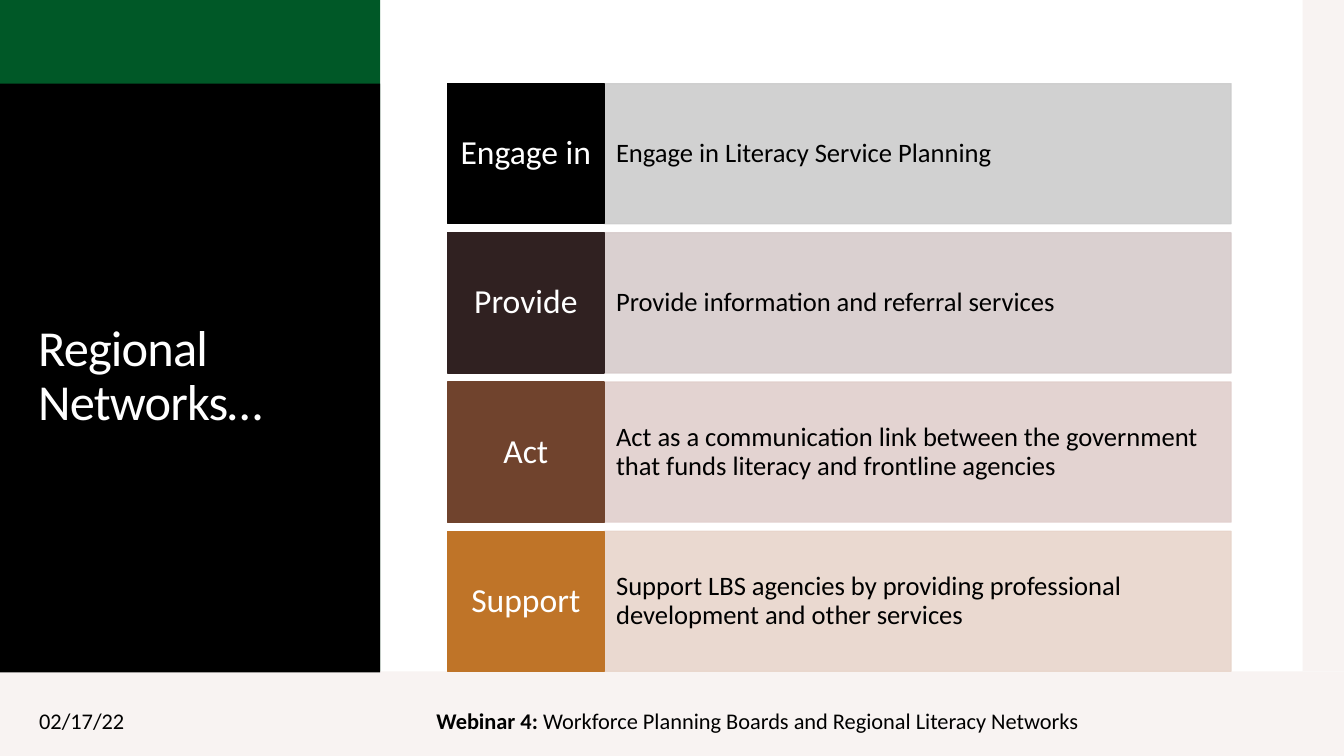
from pptx import Presentation
from pptx.dml.color import RGBColor
from pptx.enum.shapes import MSO_SHAPE
from pptx.enum.text import MSO_ANCHOR, PP_ALIGN
from pptx.oxml.ns import qn
from pptx.util import Inches, Pt
from lxml.etree import SubElement

FONT = "Calibri"
BLACK, WHITE, GREEN, BLUSH = "000000", "FFFFFF", "005827", "F8F3F2"
ROLES = [
    ("Engage in", "Engage in Literacy Service Planning", "000000", "CCCCCC"),
    ("Provide", "Provide information and referral services", "302121", "D7CBCB"),
    ("Act", "Act as a communication link between the government that funds "
     "literacy and frontline agencies", "70432D", "E1CFCC"),
    ("Support", "Support LBS agencies by providing professional development "
     "and other services", "BF7428", "E8D5CB"),
]


def color(value):
    return RGBColor.from_string(value)


def set_opacity(fill_parent, percent):
    value = fill_parent.find(qn("a:solidFill"))[0]
    SubElement(value, qn("a:alpha")).set("val", str(percent * 1000))


def add_block(page, left, top, width, height, fill, outlined=False, opacity=100):
    block = page.shapes.add_shape(MSO_SHAPE.RECTANGLE, Inches(left), Inches(top),
                                  Inches(width), Inches(height))
    block.shadow.inherit = False
    block.fill.solid()
    block.fill.fore_color.rgb = color(fill)
    if outlined:
        block.line.color.rgb = color(fill)
        block.line.width = Pt(0.85)
    else:
        block.line.fill.background()
    if opacity < 100:
        properties = block.fill._xPr
        set_opacity(properties, opacity)
        set_opacity(properties.find(qn("a:ln")), opacity)
    return block


def write(shape, spans, size, ink=BLACK, align=PP_ALIGN.LEFT, spacing=1.0,
          margins=(0.1, 0.05)):
    frame = shape.text_frame
    frame.word_wrap = True
    frame.vertical_anchor = MSO_ANCHOR.MIDDLE
    frame.margin_left = frame.margin_right = Inches(margins[0])
    frame.margin_top = frame.margin_bottom = Inches(margins[1])
    para = frame.paragraphs[0]
    para.alignment = align
    para.line_spacing = spacing
    para.font.name = FONT
    para.font.size = Pt(size)
    para.font.color.rgb = color(ink)
    for text, bold in spans:
        span = para.add_run()
        span.text = text
        span.font.bold = bold
    return para


def add_text(page, left, top, width, height, spans, size, **style):
    box = page.shapes.add_textbox(Inches(left), Inches(top),
                                  Inches(width), Inches(height))
    return write(box, spans, size, **style)


def add_frame(page, width, footer_top, side_width):
    add_block(page, -0.04, footer_top, width + 0.05, 0.85, BLUSH)
    add_block(page, width - side_width, 0, side_width, footer_top, BLUSH)
    text_top = footer_top + 0.29
    add_text(page, 0.29, text_top, 3, 0.4, [("02/17/22", False)], 16)
    add_text(page, 4.23, text_top, 7.26, 0.4,
             [("Webinar 4: ", True),
              ("Workforce Planning Boards and Regional Literacy Networks", False)], 16)


def add_title_panel(page, width, height, band):
    add_block(page, 0, 0, width, height, GREEN)
    add_block(page, 0, band, width, height - band + 0.01, BLACK)
    title = add_text(page, 0.28, band + 0.4, width - 0.55, 5.03,
                     [("Regional Networks…", False)], 36, ink=WHITE, spacing=0.9)
    title.runs[0].font._element.set("spc", "-60")


def add_roles(page, left, top, width, height, label_width=1.55, gap=0.09):
    row_height = (height - gap * (len(ROLES) - 1)) / len(ROLES)
    for index, (label, duty, dark, light) in enumerate(ROLES):
        row_top = top + index * (row_height + gap)
        panel = add_block(page, left + label_width, row_top, width - label_width,
                          row_height, light, outlined=True, opacity=90)
        write(panel, [(duty, False)], 19, spacing=0.9, margins=(0.12, 0.35))
        tile = add_block(page, left, row_top, label_width, row_height, dark,
                         outlined=True)
        write(tile, [(label, False)], 24, ink=WHITE, align=PP_ALIGN.CENTER,
              spacing=0.9, margins=(0.08, 0.14))


def main():
    deck = Presentation()
    deck.slide_width, deck.slide_height = Inches(13.33), Inches(7.5)
    page = deck.slides.add_slide(deck.slide_layouts[6])
    add_frame(page, 13.33, 6.66, 0.41)
    add_title_panel(page, 3.77, 6.66, 0.83)
    add_roles(page, 4.44, 0.83, 7.77, 5.83)
    deck.save("out.pptx")


if __name__ == "__main__":
    main()
